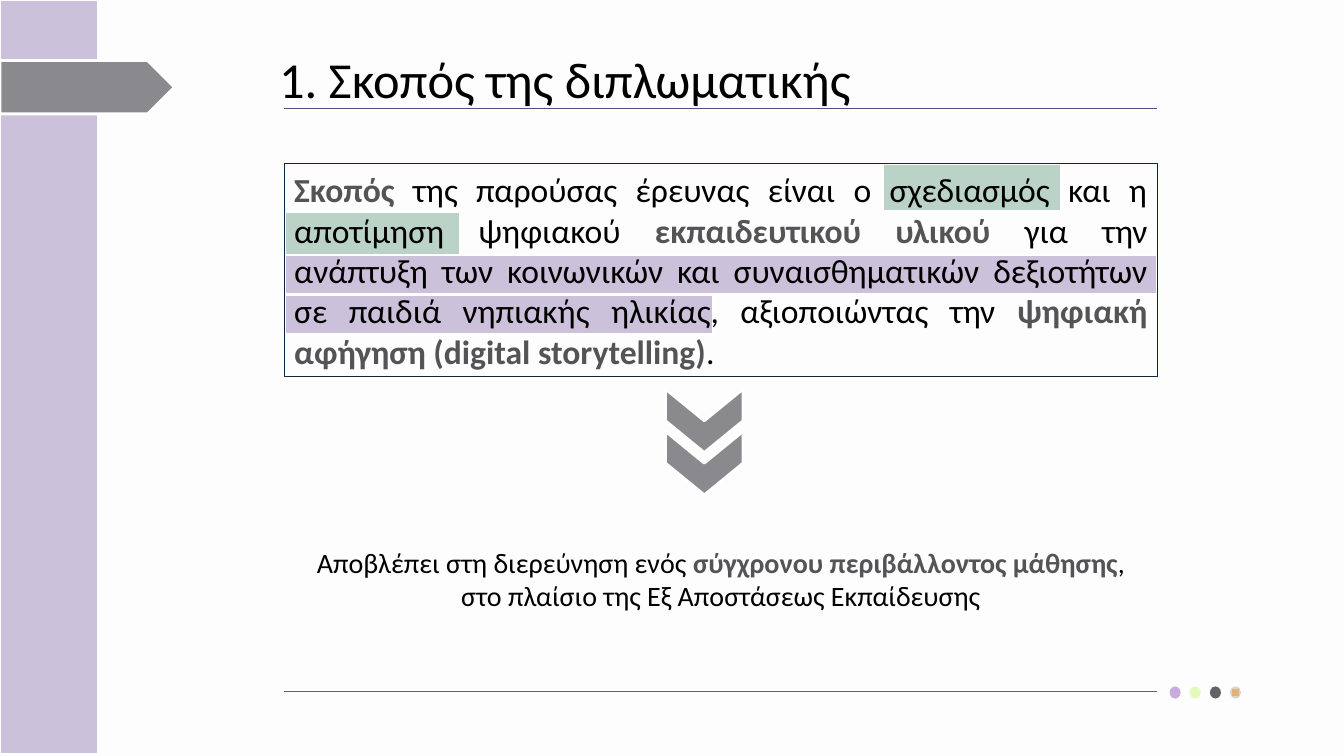
import pptx
import pptx.dml.color
import pptx.enum.shapes
import pptx.enum.text
import pptx.oxml
import pptx.oxml.ns
import pptx.util

Inches = pptx.util.Inches
Pt = pptx.util.Pt
Shape = pptx.enum.shapes.MSO_SHAPE
Align = pptx.enum.text.PP_ALIGN
Anchor = pptx.enum.text.MSO_ANCHOR

COLOURS = {
    "background": "FDFDFD", "white": "FFFFFF", "text": "000000",
    "strong": "545457", "lilac": "CCC1DA", "sage": "BBD3C7",
    "grey": "8A8A8E", "frame": "0F243E", "title rule": "604A7B",
    "dark": "626266", "violet": "C9ACDE", "lime": "E4FABC",
    "orange": "E4B178", "stone": "D8D6CC",
}
NAMESPACE = pptx.oxml.ns.nsdecls("a")
SHADOW = (
    f'<a:effectLst {NAMESPACE}><a:outerShdw blurRad="50800" dist="38100" dir="5400000">'
    '<a:srgbClr val="000000"><a:alpha val="40000"/></a:srgbClr>'
    '</a:outerShdw></a:effectLst>'
)
RADIAL = (
    f'<a:path {NAMESPACE} path="shape">'
    '<a:fillToRect l="50000" t="50000" r="50000" b="50000"/></a:path>'
)
LEFT, WIDTH = 2.82, 8.66


def colour(name):
    return pptx.dml.color.RGBColor.from_string(COLOURS[name])


class SlideBuilder:
    def __init__(self, slide, font="Calibri"):
        self.slide = slide
        self.font = font
        background = slide.background.fill
        background.solid()
        background.fore_color.rgb = colour("background")

    def shape(self, kind, box, fill=None, line=None, line_width=2, rotation=0):
        shape = self.slide.shapes.add_shape(kind, *map(Inches, box))
        shape.shadow.inherit = False
        shape.rotation = rotation
        if fill:
            shape.fill.solid()
            shape.fill.fore_color.rgb = colour(fill)
        else:
            shape.fill.background()
        if line:
            shape.line.color.rgb = colour(line)
            shape.line.width = Pt(line_width)
        else:
            shape.line.fill.background()
        return shape

    def radial_fill(self, shape, inner, outer):
        fill = shape.fill
        fill.gradient()
        for stop, name, position in zip(fill.gradient_stops, (inner, outer), (0.57, 0.62)):
            stop.color.rgb = colour(name)
            stop.position = position
        linear = shape.element.spPr.find(".//" + pptx.oxml.ns.qn("a:lin"))
        linear.getparent().replace(linear, pptx.oxml.parse_xml(RADIAL))

    def rule(self, top, name, width, effects=f"<a:effectLst {NAMESPACE}/>"):
        line = self.slide.shapes.add_connector(
            pptx.enum.shapes.MSO_CONNECTOR.STRAIGHT,
            Inches(LEFT), Inches(top), Inches(LEFT + WIDTH), Inches(top))
        line.line.color.rgb = colour(name)
        line.line.width = Pt(width)
        line.element.spPr.append(pptx.oxml.parse_xml(effects))

    def fill_text(self, shape, parts, size, alignment, anchor=Anchor.TOP):
        """Fill a shape with (text, is_strong) parts as one paragraph."""
        frame = shape.text_frame
        frame.word_wrap = True
        frame.vertical_anchor = anchor
        paragraph = frame.paragraphs[0]
        paragraph.alignment = alignment
        for text, strong in parts:
            run = paragraph.add_run()
            run.text = text
            run.font.name = self.font
            run.font.size = Pt(size)
            run.font.bold = strong
            run.font.color.rgb = colour("strong" if strong else "text")

    def text(self, box, parts, size, alignment):
        textbox = self.slide.shapes.add_textbox(*map(Inches, box))
        self.fill_text(textbox, parts, size, alignment)


def main():
    presentation = pptx.Presentation()
    presentation.slide_width = Inches(13.33)
    presentation.slide_height = Inches(7.5)
    builder = SlideBuilder(presentation.slides.add_slide(presentation.slide_layouts[6]))

    highlights = [
        ((LEFT, 2.92, 4.26, 0.4), "lilac"),
        ((LEFT, 2.53, WIDTH, 0.39), "lilac"),
        ((LEFT, 2.1, 1.75, 0.43), "sage"),
        ((8.75, 1.62, 1.78, 0.48), "sage"),
    ]
    for box, fill in highlights:
        builder.shape(Shape.RECTANGLE, box, fill, "white")

    builder.text((2.67, 0.43, 8.64, 0.71),
                 [("1. Σκοπός της διπλωματικής", False)], 36, Align.LEFT)
    builder.rule(1.08, "title rule", 0.75, SHADOW)
    builder.rule(6.86, "dark", 1)

    for index, fill in enumerate(("violet", "lime", "dark", "orange")):
        dot = builder.shape(Shape.OVAL, (11.6 + 0.2 * index, 6.81, 0.11, 0.12), fill)
    builder.radial_fill(dot, "orange", "stone")

    builder.shape(Shape.RECTANGLE, (0, 0, 0.98, 7.48), "lilac", "white")
    builder.shape(Shape.PENTAGON, (0, 0.6, 1.73, 0.53), "grey", "white")

    purpose = builder.shape(Shape.RECTANGLE, (LEFT, 1.62, WIDTH, 2.12),
                            line="frame", line_width=0.75)
    builder.fill_text(purpose, [
        ("Σκοπός ", True),
        ("της παρούσας έρευνας είναι ο σχεδιασμός και η αποτίμηση ψηφιακού ", False),
        ("εκπαιδευτικού υλικού ", True),
        ("για την ανάπτυξη των κοινωνικών και συναισθηματικών δεξιοτήτων "
         "σε παιδιά νηπιακής ηλικίας, αξιοποιώντας την ", False),
        ("ψηφιακή αφήγηση (digital storytelling)", True),
        (".", False),
    ], 24, Align.JUSTIFY, Anchor.MIDDLE)

    for top in (3.79, 4.21):
        builder.shape(Shape.CHEVRON, (6.67, top, 0.63, 0.77), "grey", "white", rotation=90)

    builder.text((LEFT, 5.36, WIDTH, 0.77), [
        ("Αποβλέπει στη διερεύνηση ενός ", False),
        ("σύγχρονου περιβάλλοντος μάθησης", True),
        (", στο πλαίσιο της Εξ Αποστάσεως Εκπαίδευσης", False),
    ], 20, Align.CENTER)

    presentation.save("out.pptx")


if __name__ == "__main__":
    main()
